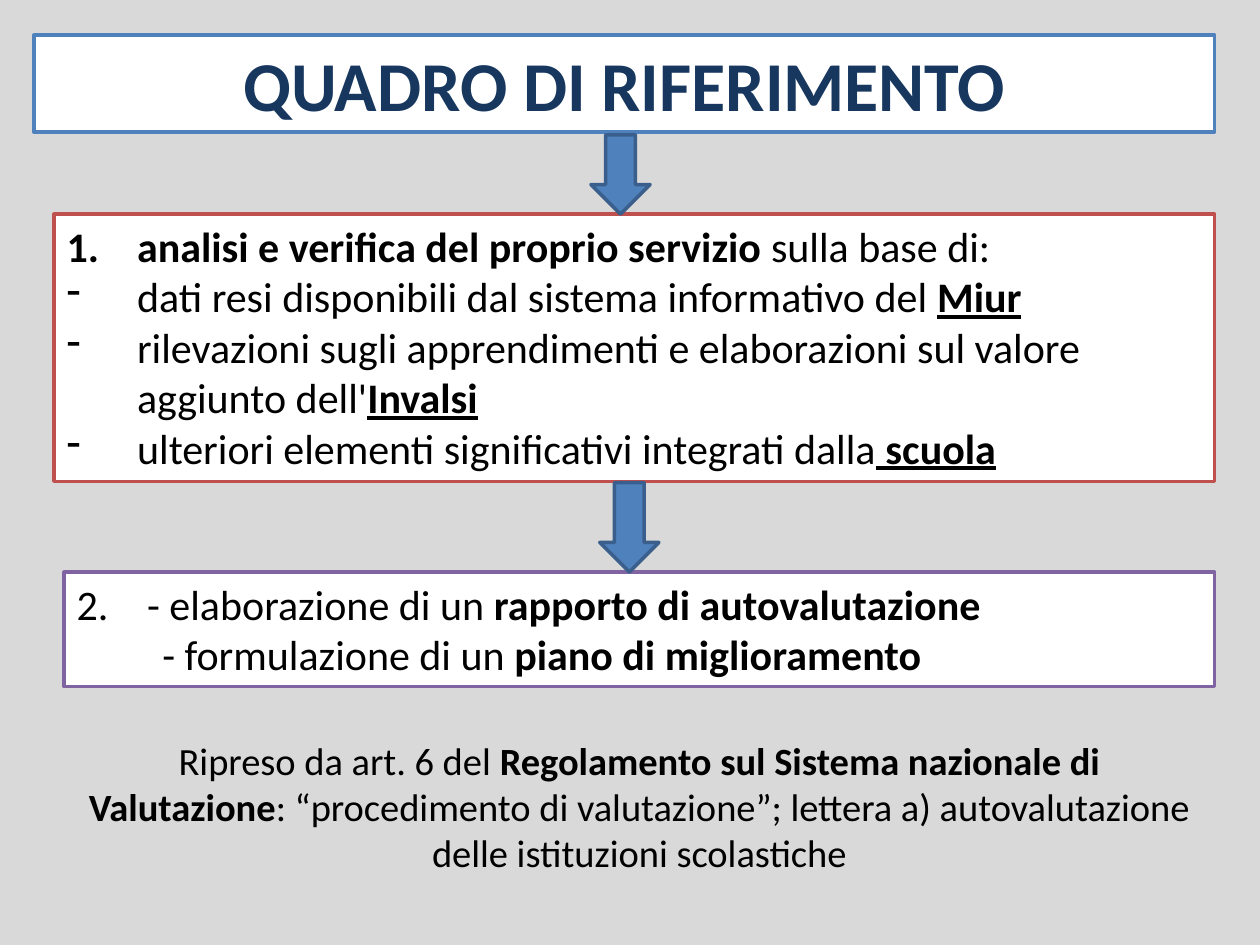
import pptx
import pptx.util
import pptx.dml.color
import pptx.enum.shapes
import pptx.enum.text
from dataclasses import dataclass
from lxml import etree

Inches = pptx.util.Inches
Pt = pptx.util.Pt
SHAPE = pptx.enum.shapes.MSO_SHAPE
ALIGN = pptx.enum.text.PP_ALIGN
FIT = pptx.enum.text.MSO_AUTO_SIZE
NS = "http://schemas.openxmlformats.org/drawingml/2006/main"


@dataclass(frozen=True)
class Theme:
    font: str = "Calibri"
    back: str = "D9D9D9"
    white: str = "FFFFFF"
    black: str = "000000"
    navy: str = "17375E"
    blue: str = "4F81BD"
    edge: str = "3A5F8C"
    red: str = "C0504D"
    violet: str = "8064A2"
    title: int = 40
    body: int = 24
    note: int = 22
    line: int = 2


THEME = Theme()


def color(code):
    return pptx.dml.color.RGBColor.from_string(code)


def add_mark(para, mark, start=1):
    """Give a paragraph a hanging dash or number."""
    props = para._p.get_or_add_pPr()
    props.set("marL", str(Inches(0.56)))
    props.set("indent", str(Inches(-0.56)))
    if mark == "-":
        etree.SubElement(props, f"{{{NS}}}buChar", char="-")
    else:
        num = etree.SubElement(props, f"{{{NS}}}buAutoNum", type="arabicPeriod")
        if start > 1:
            num.set("startAt", str(start))


def add_text(para, text, size=THEME.body, ink=THEME.black, bold=False, under=False):
    run = para.add_run()
    run.text = text
    font = run.font
    font.name = THEME.font
    font.size = Pt(size)
    font.color.rgb = color(ink)
    font.bold = bold
    font.underline = under


def add_shape(slide, kind, box, fill, edge):
    shape = slide.shapes.add_shape(kind, *map(Inches, box))
    shape.shadow.inherit = False
    shape.fill.solid()
    shape.fill.fore_color.rgb = color(fill)
    shape.line.color.rgb = color(edge)
    shape.line.width = Pt(THEME.line)
    return shape


def set_frame(shape, align=ALIGN.LEFT, count=1):
    """Prepare a text frame and return its paragraphs."""
    frame = shape.text_frame
    frame.word_wrap = True
    frame.auto_size = FIT.SHAPE_TO_FIT_TEXT
    frame.vertical_anchor = pptx.enum.text.MSO_ANCHOR.TOP
    for _ in range(count - 1):
        frame.add_paragraph()
    for para in frame.paragraphs:
        para.alignment = align
    return frame.paragraphs


def add_panel(slide, box, edge, **style):
    return set_frame(add_shape(slide, SHAPE.RECTANGLE, box, THEME.white, edge), **style)


def add_title(slide, box):
    para, = add_panel(slide, box, THEME.blue, align=ALIGN.CENTER)
    add_text(para, "QUADRO DI RIFERIMENTO", size=THEME.title, ink=THEME.navy, bold=True)


def add_study(slide, box):
    head, *items = add_panel(slide, box, THEME.red, count=4)
    add_mark(head, "1.")
    add_text(head, "analisi e verifica del proprio servizio ", bold=True)
    add_text(head, "sulla base di:")
    rows = [
        ("dati resi disponibili dal sistema informativo del ", "Miur"),
        ("rilevazioni sugli apprendimenti e elaborazioni sul valore "
         "aggiunto dell'", "Invalsi"),
        ("ulteriori elementi significativi integrati dalla", " scuola"),
    ]
    for para, (lead, key) in zip(items, rows):
        add_mark(para, "-")
        add_text(para, lead)
        add_text(para, key, bold=True, under=True)


def add_report(slide, box):
    first, second = add_panel(slide, box, THEME.violet, count=2)
    add_mark(first, "2.", start=2)
    add_text(first, "- elaborazione di un ")
    add_text(first, "rapporto di autovalutazione", bold=True)
    second._p.get_or_add_pPr().set("marL", str(Inches(0.68)))
    add_text(second, "- formulazione di un ")
    add_text(second, "piano di miglioramento", bold=True)


def add_arrow(slide, box):
    add_shape(slide, SHAPE.DOWN_ARROW, box, THEME.blue, THEME.edge)


def add_note(slide, box):
    shape = slide.shapes.add_textbox(*map(Inches, box))
    para, = set_frame(shape, align=ALIGN.CENTER)
    add_text(para, "Ripreso da art. 6 del ", size=THEME.note)
    add_text(para, "Regolamento sul Sistema nazionale di Valutazione",
             size=THEME.note, bold=True)
    add_text(para, ": “procedimento di valutazione”; lettera a) autovalutazione "
             "delle istituzioni scolastiche", size=THEME.note)


def main():
    deck = pptx.Presentation()
    deck.slide_width, deck.slide_height = Inches(10), Inches(7.5)
    slide = deck.slides.add_slide(deck.slide_layouts[6])
    slide.background.fill.solid()
    slide.background.fill.fore_color.rgb = color(THEME.back)

    # Panels
    add_title(slide, (0.27, 0.28, 9.37, 0.77))
    add_report(slide, (0.51, 4.54, 9.13, 0.91))
    add_study(slide, (0.43, 1.7, 9.21, 2.12))

    # Arrows between the panels
    add_arrow(slide, (4.69, 1.07, 0.47, 0.63))
    add_arrow(slide, (4.76, 3.83, 0.47, 0.71))

    # Legal reference
    add_note(slide, (0.51, 5.8, 9.13, 1.58))
    deck.save("out.pptx")


if __name__ == "__main__":
    main()
